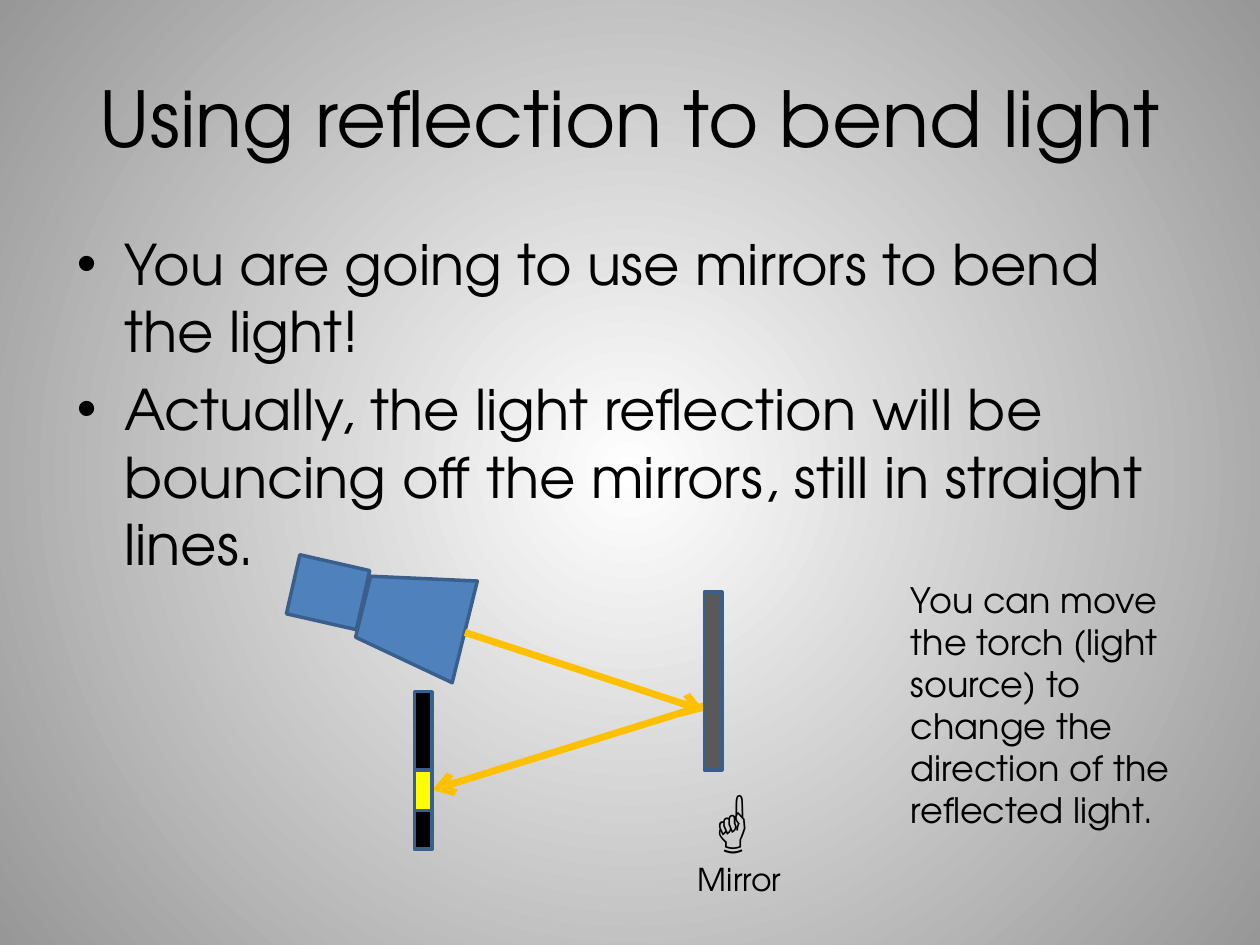
"""Build a slide on bending light by reflection, with a torch, mirror and screen diagram."""
from dataclasses import dataclass

from lxml.etree import SubElement
from pptx import Presentation
from pptx.dml.color import RGBColor
from pptx.enum.shapes import MSO_CONNECTOR, MSO_SHAPE
from pptx.enum.text import MSO_AUTO_SIZE
from pptx.oxml.ns import qn
from pptx.util import Pt


@dataclass(frozen=True)
class Theme:
    font: str = "TeX Gyre Adventor"
    text: str = "000000"
    center: str = "FFFFFF"
    edge: str = "979797"
    torch: str = "4F81BD"
    outline: str = "3A5F8C"
    ray: str = "FFC000"
    mirror: str = "595959"
    screen: str = "000000"
    spot: str = "FFFF00"
    title_size: int = 44
    body_size: int = 32
    hand_size: int = 40
    label_size: int = 18
    note_size: int = 20
    outline_width: int = 2
    ray_width: int = 4


THEME = Theme()
TITLE = "Using reflection to bend light"
BULLETS = [
    "You are going to use mirrors to bend the light!",
    "Actually, the light reflection will be bouncing off the mirrors, still in straight lines.",
]
NOTE = "You can move the torch (light source) to change the direction of the reflected light."
LABEL = [("☝", THEME.hand_size), ("Mirror", THEME.label_size)]

TITLE_BOX = (36, 21.6, 648, 90)
BODY_BOX = (36.7, 127.4, 648, 223.2)
LABEL_BOX = (391.7, 439.9, 92.9, 55.4)
NOTE_BOX = (513.4, 326.9, 181.4, 152.6)

TORCH = [
    (MSO_SHAPE.FLOWCHART_MANUAL_OPERATION, (206.6, 324, 59.8, 59.8), 103.9),
    (MSO_SHAPE.RECTANGLE, (167, 321.1, 41, 34.6), 12.8),
]
RAYS = [((265.7, 361.4), (402.5, 406.1)), ((402.5, 403.2), (247, 451.4))]
SLAB_WIDTH = 10.1
SCREEN_X, MIRROR_X = 236.9, 402.5
SLABS = [
    (SCREEN_X, 395.3, 45.4, THEME.screen),
    (SCREEN_X, 439.9, 25.2, THEME.spot),
    (SCREEN_X, 463, 22.3, THEME.screen),
    (MIRROR_X, 338.4, 101.5, THEME.mirror),
]


def rgb(value):
    return RGBColor.from_string(value)


def place(sp, box):
    sp.left, sp.top, sp.width, sp.height = map(Pt, box)


def style(font, size):
    font.name, font.size = THEME.font, Pt(size)
    font.color.rgb = rgb(THEME.text)


def fill_placeholder(sp, box, lines, size):
    place(sp, box)
    tf = sp.text_frame
    tf.text = "\n".join(lines)
    for p in tf.paragraphs:
        style(p.font, size)


def add_text(slide, box, runs):
    tf = slide.shapes.add_textbox(*map(Pt, box)).text_frame
    tf.word_wrap = True
    tf.auto_size = MSO_AUTO_SIZE.SHAPE_TO_FIT_TEXT
    for text, size in runs:
        r = tf.paragraphs[0].add_run()
        r.text = text
        style(r.font, size)


def add_part(group, kind, box, color, rotation=0):
    sp = group.shapes.add_shape(kind, *map(Pt, box))
    sp.rotation = rotation
    sp.shadow.inherit = False
    sp.fill.solid()
    sp.fill.fore_color.rgb = rgb(color)
    sp.line.color.rgb = rgb(THEME.outline)
    sp.line.width = Pt(THEME.outline_width)


def add_ray(group, start, end):
    ray = group.shapes.add_connector(MSO_CONNECTOR.STRAIGHT, *map(Pt, start + end))
    ray.line.color.rgb = rgb(THEME.ray)
    ray.line.width = Pt(THEME.ray_width)
    props = ray.element.find(qn("p:spPr"))
    SubElement(props.find(qn("a:ln")), qn("a:tailEnd"), type="arrow")
    SubElement(props, qn("a:effectLst"))


def set_background(slide):
    fill = slide.background.fill
    fill.gradient()
    for stop, position, color in zip(fill.gradient_stops, (0, 1), (THEME.center, THEME.edge)):
        stop.position = position
        stop.color.rgb = rgb(color)
    lin = next(slide.element.iter(qn("a:lin")))
    grad = lin.getparent()
    circle = SubElement(grad, qn("a:path"), path="circle")
    SubElement(circle, qn("a:fillToRect"), dict.fromkeys("ltrb", "50000"))
    grad.replace(lin, circle)


def main():
    prs = Presentation()
    prs.slide_width, prs.slide_height = Pt(720), Pt(540)
    slide = prs.slides.add_slide(prs.slide_layouts[1])
    set_background(slide)
    fill_placeholder(slide.shapes.title, TITLE_BOX, [TITLE], THEME.title_size)
    fill_placeholder(slide.placeholders[1], BODY_BOX, BULLETS, THEME.body_size)

    diagram = slide.shapes.add_group_shape()
    for kind, box, rotation in TORCH:
        add_part(diagram, kind, box, THEME.torch, rotation)
    for start, end in RAYS:
        add_ray(diagram, start, end)
    for x, y, height, color in SLABS:
        add_part(diagram, MSO_SHAPE.RECTANGLE, (x, y, SLAB_WIDTH, height), color)

    add_text(slide, LABEL_BOX, LABEL)
    add_text(slide, NOTE_BOX, [(NOTE, THEME.note_size)])
    prs.save("out.pptx")


if __name__ == "__main__":
    main()
